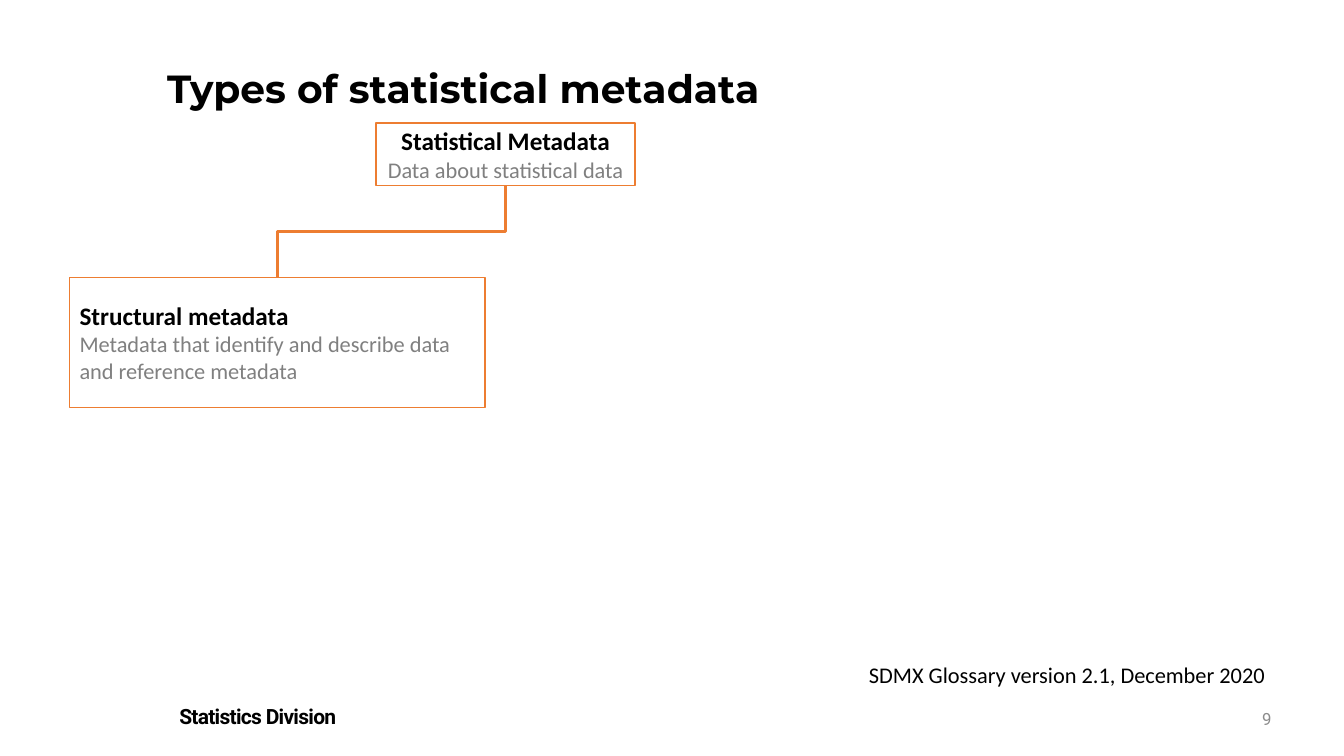
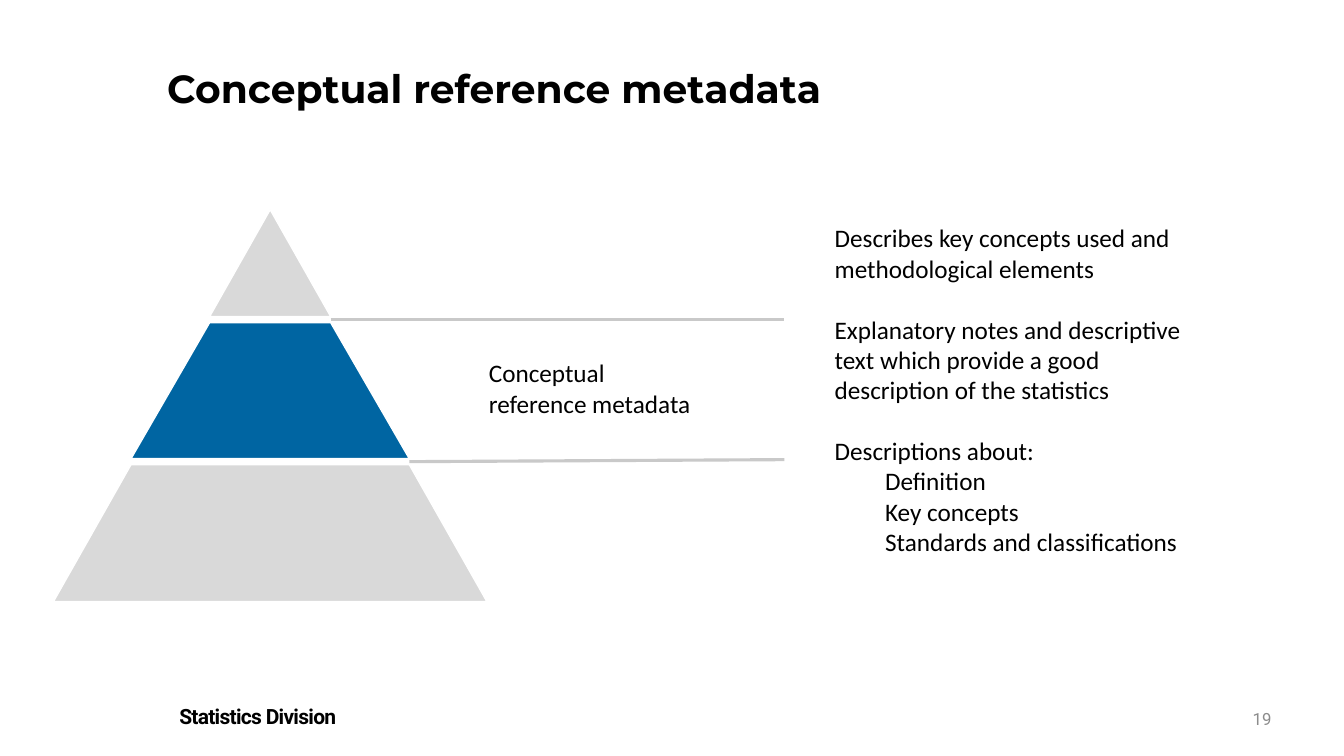
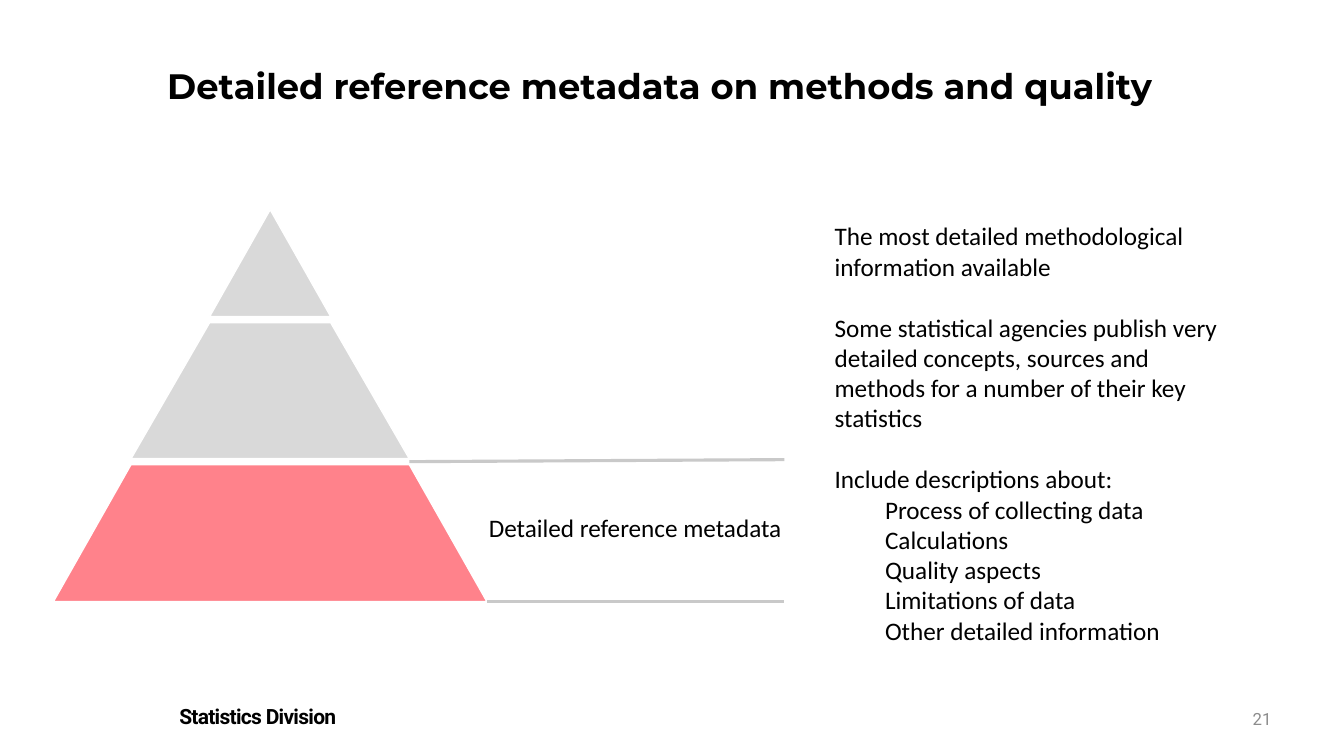
from pptx import Presentation
from pptx.dml.color import RGBColor
from pptx.enum.shapes import MSO_CONNECTOR as CONNECTOR, MSO_SHAPE as SHAPE
from pptx.enum.text import MSO_ANCHOR as ANCHOR, MSO_AUTO_SIZE as AUTO, PP_ALIGN as ALIGN
from pptx.oxml.ns import qn
from pptx.util import Inches, Pt
from lxml.etree import SubElement

BLACK = RGBColor(0x00, 0x00, 0x00)
WHITE = RGBColor(0xFF, 0xFF, 0xFF)
GREY = RGBColor(0x80, 0x80, 0x80)
NUMBER_GREY = RGBColor(0x8C, 0x8C, 0x8C)
TIER_GREY = RGBColor(0xD9, 0xD9, 0xD9)
GUIDE_GREY = RGBColor(0xC9, 0xC9, 0xC9)
ORANGE = RGBColor(0xED, 0x7D, 0x31)
BLUE = RGBColor(0x00, 0x65, 0xA2)
PINK = RGBColor(0xFF, 0x82, 0x8B)

# Pyramid geometry in inches: axis, half widths at each level, tier heights
AXIS = 2.68
HALF_WIDTHS = [0, 0.6, 1.38, 2.15]
TIERS = [(2.08, 3.14), (3.2, 4.55), (4.61, 5.97)]
# Start and end heights of the guide under each tier
GUIDES = [(3.17, 3.17), (4.58, 4.56), (5.97, 5.97)]
GUIDE_END = 7.78


class Deck:
    """Holds the shared style and the current page."""

    def __init__(self):
        self.file = Presentation()
        self.file.slide_width, self.file.slide_height = Inches(13.33), Inches(7.5)
        self.page = None

    def new_page(self, title, number, title_size=28):
        self.page = self.file.slides.add_slide(self.file.slide_layouts[6])
        # Footer
        footer = self.text("Statistics Division", 1.68, 6.93, 5.84, 0.35, 15, "Roboto", bold=True)
        for span in footer.text_frame.paragraphs[0].runs:
            span._r.get_or_add_rPr().set("spc", "-50")
        # Title
        heading = self.text(title, 1.56, 0.64, 10.86, 0.91, title_size, "Montserrat", bold=True)
        heading.text_frame.paragraphs[0].line_spacing = 0.9
        # Page number
        box = self.text(number, 12.07, 6.93, 0.64, 0.4, 12, "Roboto", NUMBER_GREY)
        box.text_frame.vertical_anchor = ANCHOR.MIDDLE
        box.text_frame.paragraphs[0].alignment = ALIGN.RIGHT

    def format(self, para, size, font="Calibri", color=BLACK, bold=False):
        for span in para.runs:
            span.font.size, span.font.name = Pt(size), font
            span.font.color.rgb, span.font.bold = color, bold

    def text(self, words, left, top, width, height, size=18, font="Calibri",
             color=BLACK, bold=False, wrap=True):
        box = self.page.shapes.add_textbox(Inches(left), Inches(top), Inches(width), Inches(height))
        frame = box.text_frame
        frame.text = words
        frame.word_wrap = wrap
        frame.auto_size = AUTO.NONE if wrap else AUTO.SHAPE_TO_FIT_TEXT
        for para in frame.paragraphs:
            self.format(para, size, font, color, bold)
        return box

    def explanation(self, statements, details, top, width, height):
        box = self.text("\n".join(statements + details), 8.18, top, width, height)
        for index, para in enumerate(box.text_frame.paragraphs):
            if index >= len(statements):
                para.level = 1
                margins = para._p.get_or_add_pPr()
                margins.set("marL", str(Inches(0.5)))
                margins.set("indent", "0")
            elif index:
                para.space_before = Pt(22)

    def definition_box(self, term, meaning, left, top, width, height, align):
        box = self.page.shapes.add_shape(
            SHAPE.RECTANGLE, Inches(left), Inches(top), Inches(width), Inches(height))
        box.shadow.inherit = False
        box.fill.background()
        box.line.color.rgb, box.line.width = ORANGE, Pt(1)
        frame = box.text_frame
        frame.text = f"{term}\n{meaning}"
        frame.word_wrap, frame.vertical_anchor = True, ANCHOR.MIDDLE
        for para in frame.paragraphs:
            para.alignment = align
        self.format(frame.paragraphs[0], 18, bold=True)
        self.format(frame.paragraphs[1], 16, color=GREY)
        return box

    def line(self, kind, start, end, color):
        line = self.page.shapes.add_connector(kind, *start, *end)
        line.line.color.rgb, line.line.width = color, Pt(2.25)
        SubElement(line._element.spPr, qn("a:effectLst"))
        return line

    def branch(self, parent, child):
        start = parent.left + parent.width // 2, parent.top + parent.height
        end = child.left + child.width // 2, child.top
        elbow = self.line(CONNECTOR.ELBOW, start, end, ORANGE)
        elbow.begin_connect(parent, 2)
        elbow.end_connect(child, 0)
        # Turn the elbow a quarter so that it leaves downwards
        drop, run = end[1] - start[1], start[0] - end[0]
        elbow.left = (start[0] + end[0] - drop) // 2
        elbow.top = (start[1] + end[1] - run) // 2
        elbow.width, elbow.height = drop, run
        frame = elbow._element.spPr.find(qn("a:xfrm"))
        frame.attrib.pop("flipH", None)
        frame.set("rot", "5400000")

    def pyramid(self, active, color):
        for index, (top, bottom) in enumerate(TIERS):
            upper, lower = HALF_WIDTHS[index:index + 2]
            corners = [(AXIS - upper, top), (AXIS + upper, top), (AXIS + lower, bottom)]
            outline = self.page.shapes.build_freeform(Inches(AXIS - lower), Inches(bottom))
            outline.add_line_segments([(Inches(x), Inches(y)) for x, y in corners])
            tier = outline.convert_to_shape()
            tier.shadow.inherit = False
            tier.fill.solid()
            tier.fill.fore_color.rgb = color if index == active else TIER_GREY
            tier.line.color.rgb, tier.line.width = WHITE, Pt(1)
        # Guides above and below the active tier
        for index in (active - 1, active):
            begin, finish = GUIDES[index]
            self.line(CONNECTOR.STRAIGHT,
                      (Inches(AXIS + HALF_WIDTHS[index + 1]), Inches(begin)),
                      (Inches(GUIDE_END), Inches(finish)), GUIDE_GREY)


def main():
    deck = Deck()

    # Types of metadata
    deck.new_page("Types of statistical metadata", "9")
    parent = deck.definition_box("Statistical Metadata", "Data about statistical data",
                                 3.73, 1.22, 2.57, 0.62, ALIGN.CENTER)
    child = deck.definition_box(
        "Structural metadata", "Metadata that identify and describe data and reference metadata",
        0.69, 2.75, 4.12, 1.29, ALIGN.LEFT)
    deck.branch(parent, child)
    deck.text("SDMX Glossary version 2.1, December 2020", 8.52, 6.51, 4.18, 0.37, 16, wrap=False)

    # Conceptual tier
    deck.new_page("Conceptual reference metadata", "19")
    deck.pyramid(1, BLUE)
    deck.text("Conceptual\nreference metadata", 4.75, 3.5, 2.22, 0.71, wrap=False)
    deck.explanation(
        ["Describes key concepts used and methodological elements",
         "Explanatory notes and descriptive text which provide a good description of the statistics",
         "Descriptions about:"],
        ["Definition", "Key concepts", "Standards and classifications"],
        2.16, 3.89, 3.74)

    # Detailed tier
    deck.new_page("Detailed reference metadata on methods and quality", "21", 25.2)
    deck.pyramid(2, PINK)
    deck.text("Detailed reference metadata", 4.75, 5.03, 3.14, 0.4, wrap=False)
    deck.explanation(
        ["The most detailed methodological information available",
         "Some statistical agencies publish very detailed concepts, sources and methods "
         "for a number of their key statistics",
         "Include descriptions about:"],
        ["Process of collecting data", "Calculations", "Quality aspects",
         "Limitations of data", "Other detailed information"],
        2.14, 4.24, 4.34)

    deck.file.save("out.pptx")


if __name__ == "__main__":
    main()
